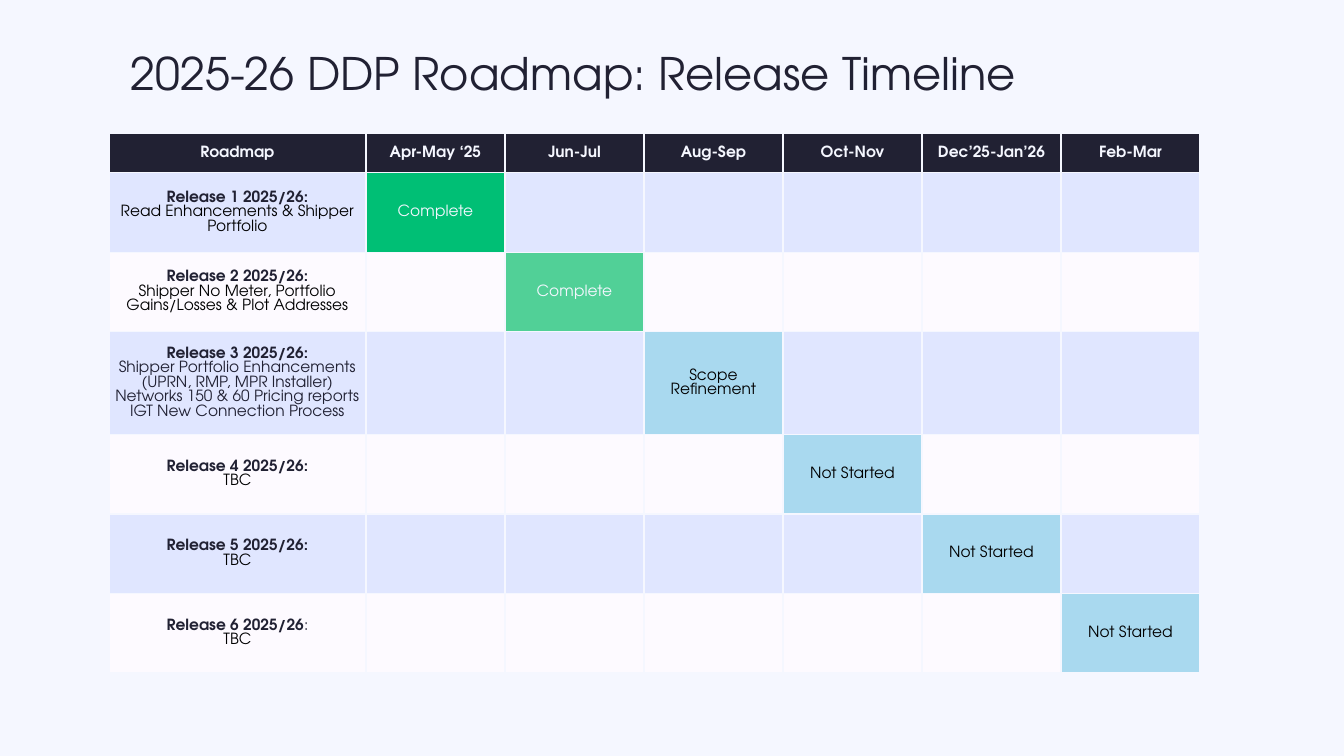
import pptx
import pptx.util
from lxml import etree
from pptx.dml.color import RGBColor
from pptx.enum.text import MSO_ANCHOR, PP_ALIGN
from pptx.oxml.ns import qn

Pt = pptx.util.Pt

FONT = "TeX Gyre Adventor"
PALE = RGBColor(0xF5, 0xF7, 0xFF)
NAVY = RGBColor(0x21, 0x21, 0x33)
BLACK = RGBColor(0x00, 0x00, 0x00)
LILAC = RGBColor(0xE0, 0xE6, 0xFF)
NEAR_WHITE = RGBColor(0xFD, 0xFA, 0xFF)
GREEN = RGBColor(0x00, 0xBF, 0x75)
MINT = RGBColor(0x51, 0xD0, 0x97)
SKY = RGBColor(0xA9, 0xD9, 0xEF)

TITLE = "2025-26 DDP Roadmap: Release Timeline"
HEADINGS = ["Roadmap", "Apr-May ‘25", "Jun-Jul", "Aug-Sep", "Oct-Nov",
            "Dec’25-Jan’26", "Feb-Mar"]


def release(number, details):
    return [[(f"Release {number} 2025/26:", True, NAVY)], [(details, False, BLACK)]]


# Each release: paragraphs of (text, bold, colour) spans, then status, its fill and colour.
RELEASES = [
    (release(1, "Read Enhancements & Shipper Portfolio"), "Complete", GREEN, PALE),
    (release(2, "Shipper No Meter, Portfolio Gains/Losses & Plot Addresses"),
     "Complete", MINT, PALE),
    ([[("Release 3 2025/26:\n", True, NAVY),
       ("Shipper Portfolio Enhancements (UPRN, RMP, MPR Installer)\n"
        "Networks 150 & 60 Pricing reports\nIGT New Connection Process", False, NAVY)]],
     "Scope Refinement", SKY, BLACK),
    (release(4, "TBC"), "Not Started", SKY, BLACK),
    (release(5, "TBC"), "Not Started", SKY, BLACK),
    ([[("Release 6 2025/26", True, NAVY), (":", False, NAVY)], [("TBC", False, BLACK)]],
     "Not Started", SKY, BLACK),
]

TABLE_LEFT, TABLE_TOP = 77.8, 95
NAME_WIDTH, PERIOD_WIDTH = 183.6, 99.3
HEADER_HEIGHT, RELEASE_HEIGHT = 28.5, 56.8
HEADER_MARGINS = {"margin_left": 0.7, "margin_top": 0.7, "margin_right": 0.7,
                  "margin_bottom": 0}
BODY_MARGINS = dict.fromkeys(HEADER_MARGINS, 3.6)


def add_span(para, text, size, bold, colour):
    """Add text to a paragraph, turning each newline into a line break."""
    for index, line in enumerate(text.split("\n")):
        if index:
            para.add_line_break()
        if line:
            span = para.add_run()
            span.text = line
            for name, value in {"name": FONT, "size": Pt(size), "bold": bold}.items():
                setattr(span.font, name, value)
            span.font.color.rgb = colour


def write_cell(cell, paragraphs):
    for index, spans in enumerate(paragraphs):
        frame = cell.text_frame
        para = frame.add_paragraph() if index else frame.paragraphs[0]
        para.alignment = PP_ALIGN.CENTER
        for text, bold, colour in spans:
            add_span(para, text, 11, bold, colour)


def style_cell(cell, fill, margins):
    cell.vertical_anchor = MSO_ANCHOR.MIDDLE
    for name, value in margins.items():
        setattr(cell, name, Pt(value))
    properties = cell._tc.get_or_add_tcPr()
    for side in ("a:lnL", "a:lnR", "a:lnT", "a:lnB"):
        line = etree.SubElement(properties, qn(side), w=str(Pt(1)))
        solid = etree.SubElement(line, qn("a:solidFill"))
        etree.SubElement(solid, qn("a:srgbClr"), val=str(PALE))
    cell.fill.solid()
    cell.fill.fore_color.rgb = fill


def add_title(page):
    box = page.shapes.add_textbox(Pt(86.4), Pt(28.8), Pt(837.4), Pt(50.4))
    frame = box.text_frame
    frame.word_wrap = True
    frame.vertical_anchor = MSO_ANCHOR.MIDDLE
    frame.paragraphs[0].line_spacing = 0.9
    add_span(frame.paragraphs[0], TITLE, 32, False, NAVY)


def add_roadmap(page):
    width = NAME_WIDTH + PERIOD_WIDTH * (len(HEADINGS) - 1)
    height = HEADER_HEIGHT + RELEASE_HEIGHT * len(RELEASES)
    table = page.shapes.add_table(len(RELEASES) + 1, len(HEADINGS), Pt(TABLE_LEFT),
                                  Pt(TABLE_TOP), Pt(width), Pt(height)).table
    for index, column in enumerate(table.columns):
        column.width = Pt(PERIOD_WIDTH if index else NAME_WIDTH)
    for index, row in enumerate(table.rows):
        row.height = Pt(RELEASE_HEIGHT if index else HEADER_HEIGHT)

    for column, heading in enumerate(HEADINGS):
        cell = table.cell(0, column)
        style_cell(cell, NAVY, HEADER_MARGINS)
        write_cell(cell, [[(heading, True, PALE)]])

    # Release n falls in period n, so the statuses run down the diagonal.
    for row, (paragraphs, status, status_fill, colour) in enumerate(RELEASES, start=1):
        band = LILAC if row % 2 else NEAR_WHITE
        for column in range(len(HEADINGS)):
            fill = status_fill if column == row else band
            style_cell(table.cell(row, column), fill, BODY_MARGINS)
        write_cell(table.cell(row, 0), paragraphs)
        write_cell(table.cell(row, row), [[(status, False, colour)]])


def main():
    deck = pptx.Presentation()
    deck.slide_width, deck.slide_height = Pt(960), Pt(540)
    page = deck.slides.add_slide(deck.slide_layouts[6])
    page.background.fill.solid()
    page.background.fill.fore_color.rgb = PALE
    add_title(page)
    add_roadmap(page)
    deck.save("out.pptx")


if __name__ == "__main__":
    main()
